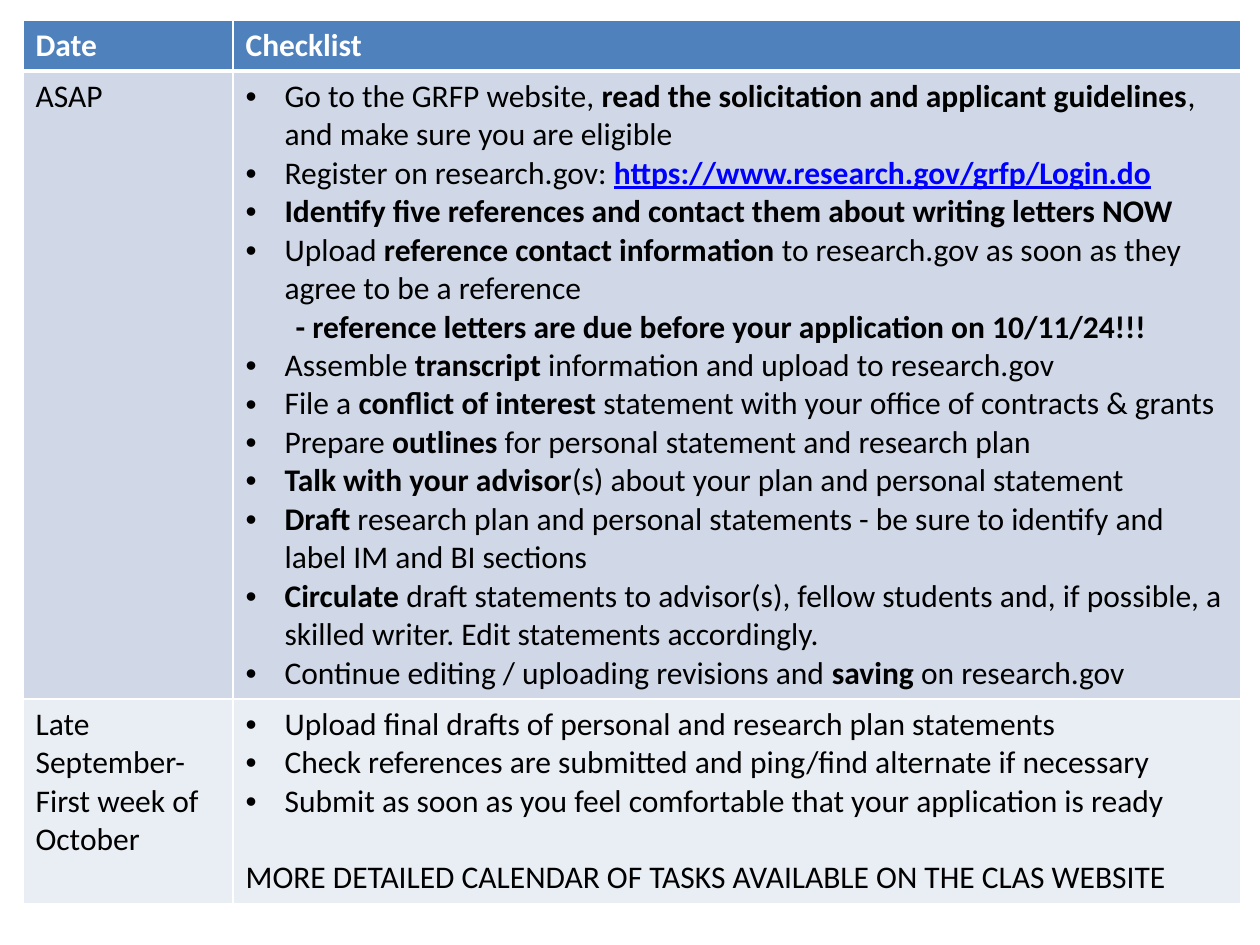
from lxml import etree
from pptx import Presentation
from pptx import util as u
from pptx.dml.color import RGBColor
from pptx.oxml.ns import qn

COLORS = {"header": "4F81BD", "asap": "D0D8E8", "late": "E9EDF4",
          "white": "FFFFFF", "black": "000000", "link": "0000FF"}
FONT, SIZE = "Calibri", 18

PLAIN, BOLD, LINK = "plain", "bold", "link"
BULLET, SUBLINE, CLOSING = "bullet", "subline", "closing"

ASAP_TASKS = [
    (BULLET, [("Go to the GRFP website, ", PLAIN),
              ("read the solicitation and applicant guidelines", BOLD),
              (", and make sure you are eligible", PLAIN)]),
    (BULLET, [("Register on research.gov: ", PLAIN),
              ("https://www.research.gov/grfp/Login.do", LINK)]),
    (BULLET, [("Identify five references and contact them about writing letters NOW", BOLD)]),
    (BULLET, [("Upload ", PLAIN), ("reference contact information ", BOLD),
              ("to research.gov as soon as they agree to be a reference", PLAIN)]),
    (SUBLINE, [("- reference letters are due before your application on 10/11/24!!!", BOLD)]),
    (BULLET, [("Assemble ", PLAIN), ("transcript ", BOLD),
              ("information and upload to research.gov", PLAIN)]),
    (BULLET, [("File a ", PLAIN), ("conflict of interest ", BOLD),
              ("statement with your office of contracts & grants", PLAIN)]),
    (BULLET, [("Prepare ", PLAIN), ("outlines", BOLD),
              (" for personal statement and research plan", PLAIN)]),
    (BULLET, [("Talk with your advisor", BOLD),
              ("(s) about your plan and personal statement", PLAIN)]),
    (BULLET, [("Draft", BOLD),
              (" research plan and personal statements - be sure to identify and label IM and BI sections", PLAIN)]),
    (BULLET, [("Circulate", BOLD),
              (" draft statements to advisor(s), fellow students and, if possible, a skilled writer. "
               "Edit statements accordingly.", PLAIN)]),
    (BULLET, [("Continue editing / uploading revisions and ", PLAIN), ("saving", BOLD),
              (" on research.gov", PLAIN)]),
]
LATE_TASKS = [
    (BULLET, [("Upload final drafts of personal and research plan statements", PLAIN)]),
    (BULLET, [("Check references are submitted and ping/find alternate if necessary", PLAIN)]),
    (BULLET, [("Submit as soon as you feel comfortable that your application is ready", PLAIN)]),
    (CLOSING, [("MORE DETAILED CALENDAR OF TASKS AVAILABLE ON THE CLAS WEBSITE", PLAIN)]),
]


def single(words, style=PLAIN):
    return [(PLAIN, [(words, style)])]


ROWS = [
    ("header", "white", 51, [single("Date", BOLD), single("Checklist", BOLD)]),
    ("asap", "black", 627, [single("ASAP"), ASAP_TASKS]),
    ("late", "black", 205, [single("Late September- First week of October"), LATE_TASKS]),
]
LEFT, TOP = 23, 20
COLUMN_WIDTHS = [210, 1008]
BULLET_INDENT, SUBLINE_INDENT = 39, 50


def px(n):
    return u.Emu(round(n * 914400 / 126))


def rgb(name):
    return RGBColor.from_string(COLORS[name])


def indent(paragraph, margin, first=0):
    properties = paragraph._p.get_or_add_pPr()
    properties.set("marL", str(px(margin)))
    properties.set("indent", str(px(first)))
    return properties


def format_paragraph(paragraph, kind):
    if kind == BULLET:
        properties = indent(paragraph, BULLET_INDENT, -BULLET_INDENT)
        etree.SubElement(properties, qn("a:buFont"), typeface="Arial")
        etree.SubElement(properties, qn("a:buChar"), char="•")
    elif kind == SUBLINE:
        indent(paragraph, SUBLINE_INDENT)
    elif kind == CLOSING:
        paragraph.space_before = u.Pt(22)


def write(frame, paragraphs, color):
    for i, (kind, runs) in enumerate(paragraphs):
        paragraph = frame.add_paragraph() if i else frame.paragraphs[0]
        format_paragraph(paragraph, kind)
        for words, style in runs:
            run = paragraph.add_run()
            run.text = words
            run.font.name, run.font.size = FONT, u.Pt(SIZE)
            run.font.bold = style != PLAIN
            run.font.underline = style == LINK
            run.font.color.rgb = rgb("link" if style == LINK else color)


def add_borders(cell, widths):
    properties = cell._tc.get_or_add_tcPr()
    for i, (side, points) in enumerate(widths.items()):
        line = etree.Element(qn("a:ln" + side), w=str(u.Pt(points)))
        fill = etree.SubElement(line, qn("a:solidFill"))
        etree.SubElement(fill, qn("a:srgbClr"), val=COLORS["white"])
        properties.insert(i, line)


def main():
    deck = Presentation()
    deck.slide_width, deck.slide_height = px(1260), px(945)
    slide = deck.slides.add_slide(deck.slide_layouts[6])
    checklist = slide.shapes.add_table(
        len(ROWS), len(COLUMN_WIDTHS), px(LEFT), px(TOP),
        px(sum(COLUMN_WIDTHS)), px(sum(row[2] for row in ROWS))).table
    for column, width in zip(checklist.columns, COLUMN_WIDTHS):
        column.width = px(width)
    for r, (fill, color, height, contents) in enumerate(ROWS):
        checklist.rows[r].height = px(height)
        for c, paragraphs in enumerate(contents):
            cell = checklist.cell(r, c)
            cell.fill.solid()
            cell.fill.fore_color.rgb = rgb(fill)
            add_borders(cell, {"L": 1, "R": 1, "T": 3 if r == 1 else 1, "B": 3 if r == 0 else 1})
            write(cell.text_frame, paragraphs, color)
    deck.save("out.pptx")


if __name__ == "__main__":
    main()
